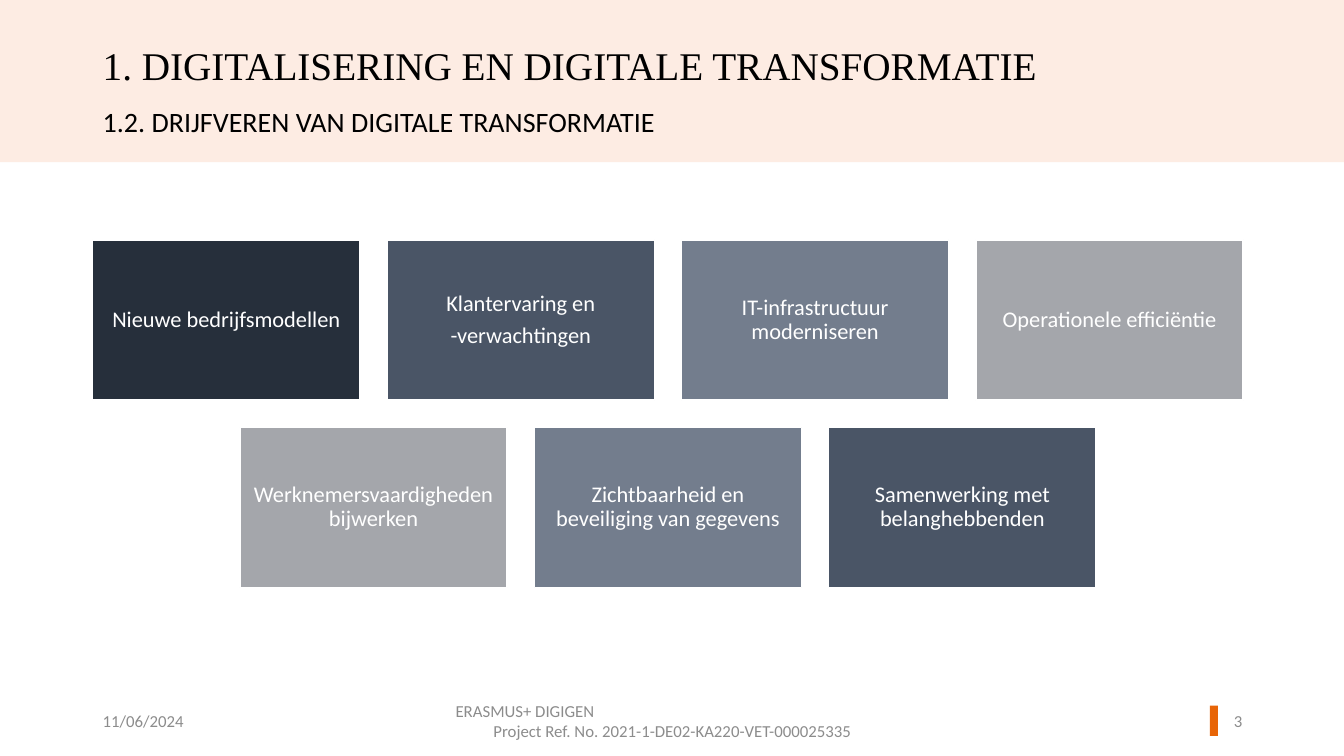
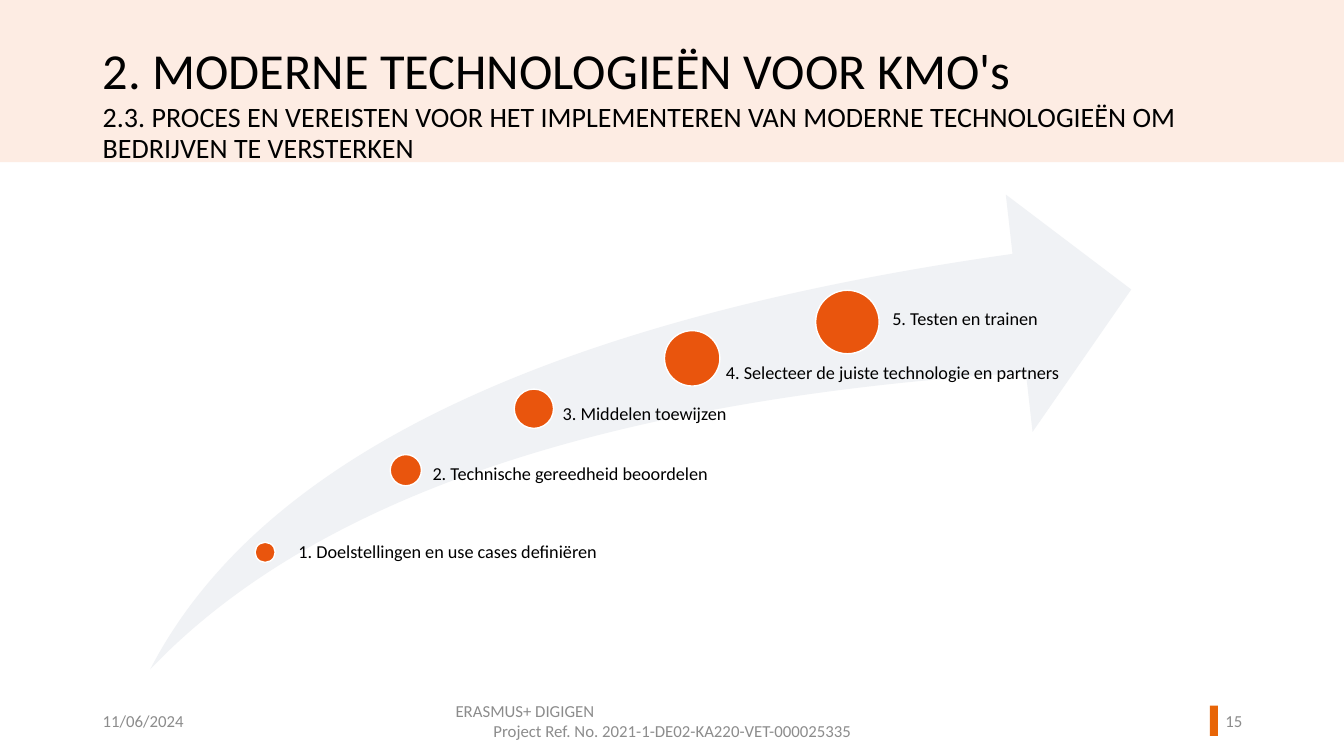
"""Build two slides on the drivers and the steps of digital transformation."""
import pptx
import pptx.dml.color
import pptx.enum.shapes
import pptx.enum.text
import pptx.util

Inches = pptx.util.Inches
Pt = pptx.util.Pt
Kind = pptx.enum.shapes.MSO_SHAPE
Align = pptx.enum.text.PP_ALIGN
Anchor = pptx.enum.text.MSO_ANCHOR
colour = pptx.dml.color.RGBColor.from_string

BLACK, WHITE, GREY = "000000", "FFFFFF", "8C8C8C"
BAND, ACCENT, DOT, SWOOSH = "FDECE3", "E86507", "E9550D", "F0F2F5"
NAVY, SLATE, STEEL, SILVER = "262F3B", "4A5566", "737D8D", "A4A6AB"


def draw(page, kind, place, fill, outline=None):
    shape = page.shapes.add_shape(kind, *[Inches(length) for length in place])
    shape.shadow.inherit = False
    shape.fill.solid()
    shape.fill.fore_color.rgb = colour(fill)
    if outline:
        shape.line.color.rgb = colour(outline)
        shape.line.width = Pt(1)
    else:
        shape.line.fill.background()
    return shape


def write(box, text, size, ink=BLACK, font="Calibri", align=Align.LEFT,
          anchor=Anchor.TOP, spacing=0.9, insets=(0.1, 0.05, 0.1, 0.05)):
    frame = box.text_frame
    frame.word_wrap = True
    frame.vertical_anchor = anchor
    (frame.margin_left, frame.margin_top,
     frame.margin_right, frame.margin_bottom) = [Inches(inset) for inset in insets]
    frame.text = text
    for para in frame.paragraphs:
        para.alignment = align
        para.line_spacing = spacing
        for span in para.runs:
            span.font.name = font
            span.font.size = Pt(size)
            span.font.color.rgb = colour(ink)
    return frame


deck = pptx.Presentation()
deck.slide_width = Inches(13.33)
deck.slide_height = Inches(7.5)

headings = [
    ("1. DIGITALISERING EN DIGITALE TRANSFORMATIE", 28, "Times New Roman",
     "1.2. DRIJFVEREN VAN DIGITALE TRANSFORMATIE", 1.03, "3"),
    ("2. MODERNE TECHNOLOGIEËN VOOR KMO's", 36, "Calibri",
     "2.3. PROCES EN VEREISTEN VOOR HET IMPLEMENTEREN VAN MODERNE "
     "TECHNOLOGIEËN OM BEDRIJVEN TE VERSTERKEN", 0.98, "15"),
]
project = "ERASMUS+ DIGIGEN\nProject Ref. No. 2021-1-DE02-KA220-VET-000025335"

for title, title_size, title_font, subtitle, subtitle_top, number in headings:
    page = deck.slides.add_slide(deck.slide_layouts[6])
    draw(page, Kind.RECTANGLE, (0, 0, 13.33, 1.61), BAND)
    draw(page, Kind.RECTANGLE, (12, 7, 0.08, 0.3), ACCENT)
    for text, left, width, align in [
        ("11/06/2024", 0.92, 3, Align.LEFT),
        (project, 4.42, 4.5, Align.CENTER),
        (number, 11.77, 0.65, Align.RIGHT),
    ]:
        box = page.shapes.add_textbox(Inches(left), Inches(6.95), Inches(width), Inches(0.4))
        frame = write(box, text, 12, GREY, align=align, anchor=Anchor.MIDDLE, spacing=1)
        if text == project:
            frame.paragraphs[0].alignment = Align.LEFT
    for text, top, size, font in [
        (title, 0.41, title_size, title_font),
        (subtitle, subtitle_top, 20, "Calibri"),
    ]:
        box = page.shapes.add_textbox(Inches(0.92), Inches(top), Inches(10.85), Inches(0.85))
        write(box, text, size, font=font)

drivers_page, steps_page = deck.slides

tile_width, tile_height, gap = 2.65, 1.59, 0.27
driver_rows = [
    (0.92, [("Nieuwe bedrijfsmodellen", NAVY),
            ("Klantervaring en\n-verwachtingen", SLATE),
            ("IT-infrastructuur moderniseren", STEEL),
            ("Operationele efficiëntie", SILVER)]),
    (2.38, [("Werknemersvaardigheden bijwerken", SILVER),
            ("Zichtbaarheid en beveiliging van gegevens", STEEL),
            ("Samenwerking met belanghebbenden", SLATE)]),
]
for row, (row_left, drivers) in enumerate(driver_rows):
    top = 2.38 + row * (tile_height + gap)
    for column, (text, fill) in enumerate(drivers):
        left = row_left + column * (tile_width + gap)
        tile = draw(drivers_page, Kind.RECTANGLE, (left, top, tile_width, tile_height), fill, WHITE)
        frame = write(tile, text, 16, WHITE, align=Align.CENTER,
                      anchor=Anchor.MIDDLE, insets=(0.07,) * 4)
        for para in frame.paragraphs[:-1]:
            para.space_after = Pt(6)

swoosh = draw(steps_page, Kind.SWOOSH_ARROW, (1.49, 1.93, 9.73, 4.71), SWOOSH)
swoosh.adjustments[0] = 0.25
swoosh.adjustments[1] = 0.25
steps = [
    ("1. Doelstellingen en use cases definiëren", (2.53, 5.38, 0.2), (2.87, 5.38, 3.45, 0.46), 0.09),
    ("2. Technische gereedheid beoordelen", (3.87, 4.51, 0.31), (4.15, 4.61, 3.46, 0.45), 0.14),
    ("3. Middelen toewijzen", (5.1, 3.86, 0.39), (5.39, 4.02, 3.01, 0.55), 0.19),
    ("4. Selecteer de juiste technologie en partners", (6.59, 3.28, 0.55), (6.95, 3.61, 3.77, 0.42), 0.25),
    ("5. Testen en trainen", (8.09, 2.88, 0.63), (8.53, 3.07, 2.98, 0.73), 0.32),
]
for text, (left, top, diameter), label_place, inset in steps:
    draw(steps_page, Kind.OVAL, (left, top, diameter, diameter), DOT, WHITE)
    label = steps_page.shapes.add_textbox(*[Inches(length) for length in label_place])
    write(label, text, 13, insets=(inset, 0, 0, 0))

deck.save("out.pptx")
